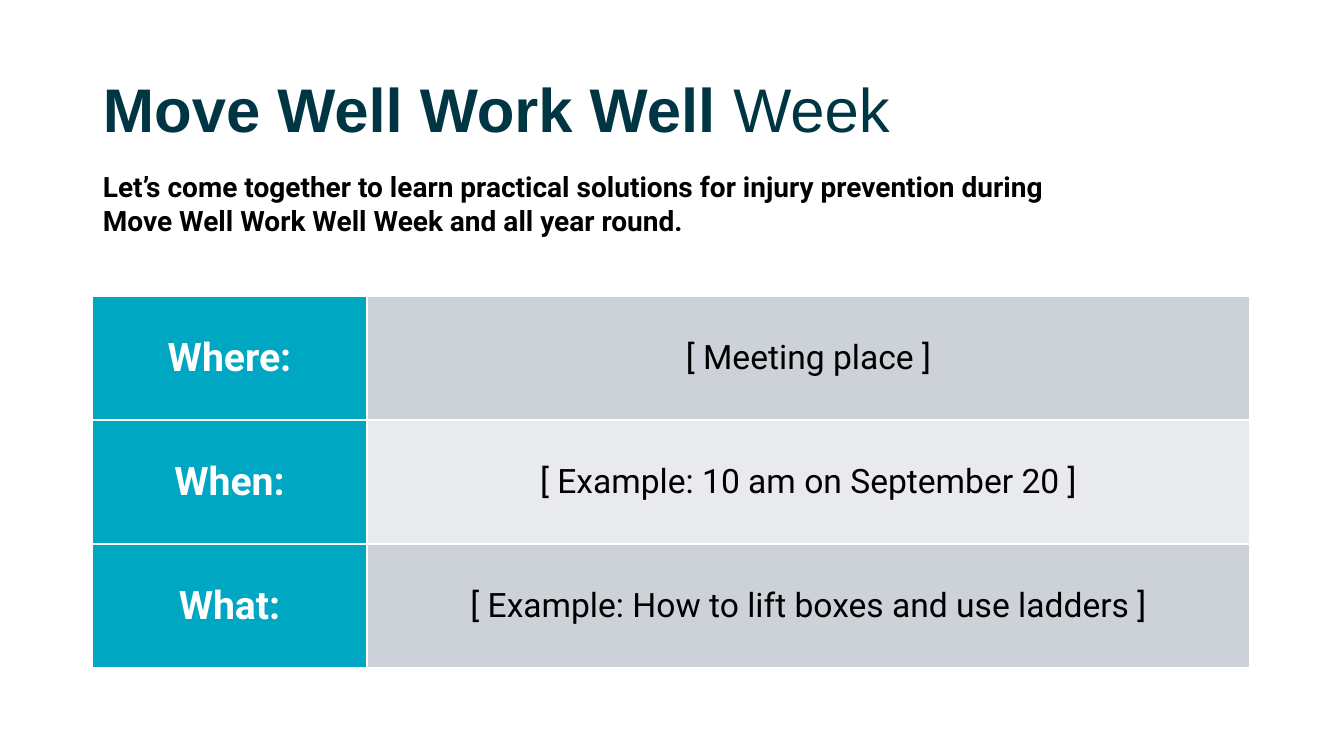
from lxml.etree import SubElement
from pptx import Presentation
from pptx.dml.color import RGBColor
from pptx.enum.text import MSO_ANCHOR as Anchor, PP_ALIGN as Align
from pptx.oxml.ns import qn
from pptx.util import Pt

TITLE = [("Move Well Work Well ", True), ("Week", False)]
INVITATION = (
    "Let’s come together to learn practical solutions for injury prevention "
    "during Move Well Work Well Week and all year round."
)
DETAILS = [
    ("Where:", "[ Meeting place ]"),
    ("When:", "[ Example: 10 am on September 20 ]"),
    ("What:", "[ Example: How to lift boxes and use ladders ]"),
]

SLIDE_SIZE = (1344, 756)
TITLE_BOX = (93, 40, 1159, 146)
INVITATION_BOX = (93, 165, 966, 78)
TABLE_LEFT, TABLE_TOP = 92, 296
COLUMN_WIDTHS = (275, 883)
ROW_HEIGHT = 124

NAVY = RGBColor(0x00, 0x36, 0x43)
TEAL = RGBColor(0x00, 0xA7, 0xC3)
BLACK = RGBColor(0x00, 0x00, 0x00)
WHITE = RGBColor(0xFF, 0xFF, 0xFF)
BANDS = (RGBColor(0xCC, 0xD2, 0xD8), RGBColor(0xE8, 0xEA, 0xED))

EMU_PER_PX = 12192000 / SLIDE_SIZE[0]


def px(length):
    return round(length * EMU_PER_PX)


def style(font, name, size, color, bold):
    font.name = name
    font.size = Pt(size)
    font.color.rgb = color
    font.bold = bold


def add_text_box(slide, box):
    text_frame = slide.shapes.add_textbox(*map(px, box)).text_frame
    text_frame.word_wrap = True
    return text_frame


def add_cell_borders(cell, color, width):
    properties = cell._tc.get_or_add_tcPr()
    for side in ("lnL", "lnR", "lnT", "lnB"):
        line = SubElement(properties, qn(f"a:{side}"), w=str(Pt(width)))
        fill = SubElement(line, qn("a:solidFill"))
        SubElement(fill, qn("a:srgbClr"), val=str(color))


def add_title(slide):
    text_frame = add_text_box(slide, TITLE_BOX)
    text_frame.vertical_anchor = Anchor.MIDDLE
    paragraph = text_frame.paragraphs[0]
    paragraph.line_spacing = 0.9
    for text, bold in TITLE:
        run = paragraph.add_run()
        run.text = text
        style(run.font, "Arial", 44, NAVY, bold)


def add_invitation(slide):
    text_frame = add_text_box(slide, INVITATION_BOX)
    text_frame.text = INVITATION
    style(text_frame.paragraphs[0].runs[0].font, "Roboto", 20, BLACK, True)


def add_details(slide):
    box = (TABLE_LEFT, TABLE_TOP, sum(COLUMN_WIDTHS), ROW_HEIGHT * len(DETAILS))
    table = slide.shapes.add_table(
        len(DETAILS), len(COLUMN_WIDTHS), *map(px, box)
    ).table
    table.first_row = False
    table.first_col = True
    for column, width in zip(table.columns, COLUMN_WIDTHS):
        column.width = px(width)
    for row_index, texts in enumerate(DETAILS):
        table.rows[row_index].height = px(ROW_HEIGHT)
        band = BANDS[row_index % len(BANDS)]
        looks = ((TEAL, 28, WHITE, True), (band, 24, BLACK, False))
        for column_index, (text, look) in enumerate(zip(texts, looks)):
            fill_color, size, color, bold = look
            cell = table.cell(row_index, column_index)
            add_cell_borders(cell, WHITE, 1)
            cell.fill.solid()
            cell.fill.fore_color.rgb = fill_color
            cell.vertical_anchor = Anchor.MIDDLE
            cell.text_frame.text = text
            paragraph = cell.text_frame.paragraphs[0]
            paragraph.alignment = Align.CENTER
            style(paragraph.runs[0].font, "Roboto", size, color, bold)


def main():
    presentation = Presentation()
    presentation.slide_width, presentation.slide_height = map(px, SLIDE_SIZE)
    slide = presentation.slides.add_slide(presentation.slide_layouts[6])
    add_title(slide)
    add_details(slide)
    add_invitation(slide)
    presentation.save("out.pptx")


if __name__ == "__main__":
    main()
